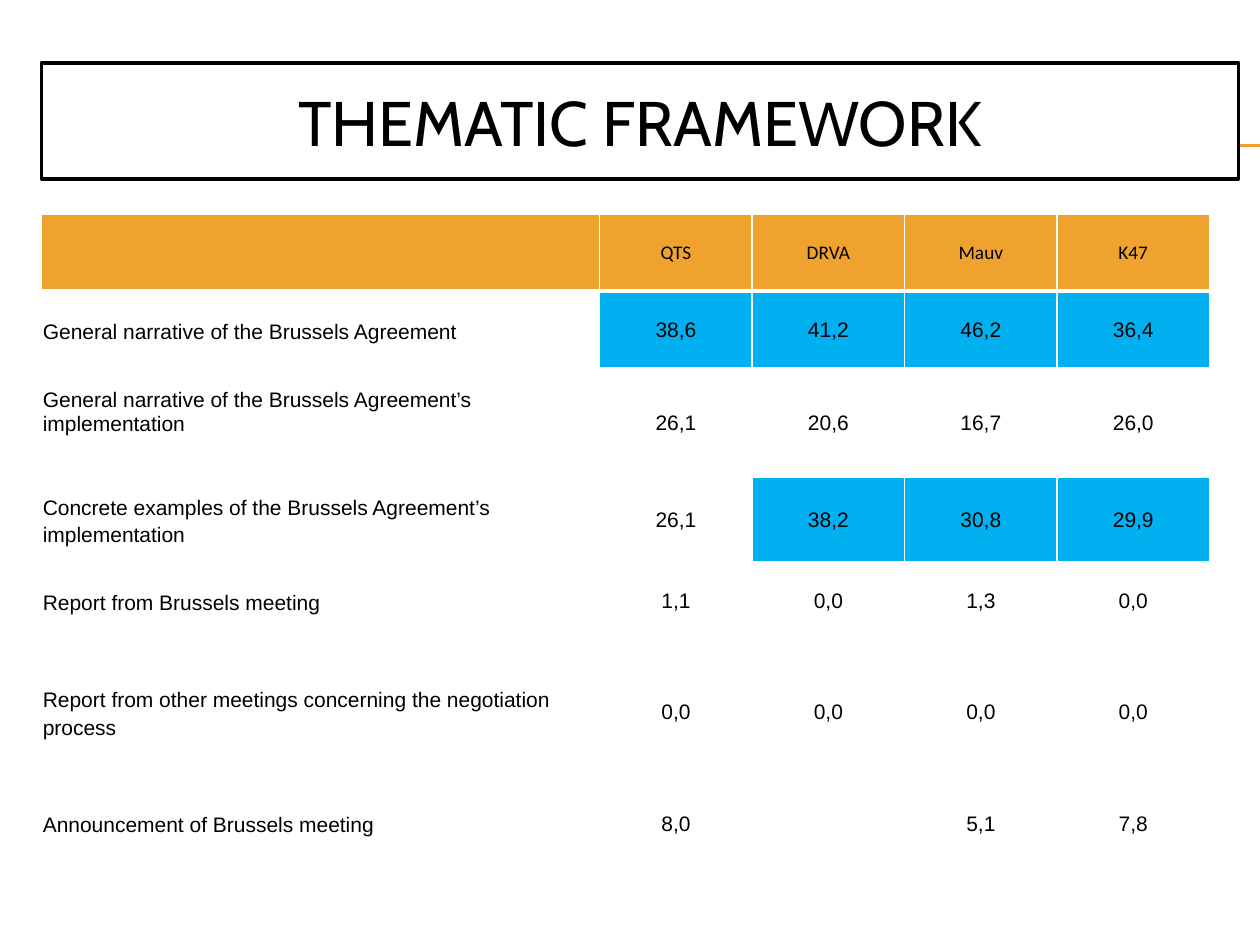
import pptx
import pptx.util
import pptx.dml.color
import pptx.enum.shapes
import pptx.enum.text
import pptx.oxml.ns
from lxml import etree

Inches, Pt = pptx.util.Inches, pptx.util.Pt
ALIGN = pptx.enum.text.PP_ALIGN
MIDDLE = pptx.enum.text.MSO_ANCHOR.MIDDLE
qn = pptx.oxml.ns.qn

COLORS = {"ink": "000000", "paper": "FFFFFF", "gold": "F0A22E", "blue": "00B0F0"}

HEADS = ["", "QTS", "DRVA", "Mauv", "K47"]
ROWS = [
    ("General narrative of the Brussels Agreement", "38,6", "41,2", "46,2", "36,4"),
    ("General narrative of the Brussels Agreement’s implementation",
     "26,1", "20,6", "16,7", "26,0"),
    ("Concrete examples of the Brussels Agreement’s implementation",
     "26,1", "38,2", "30,8", "29,9"),
    ("Report from Brussels meeting", "1,1", "0,0", "1,3", "0,0"),
    ("Report from other meetings concerning the negotiation process",
     "0,0", "0,0", "0,0", "0,0"),
    ("Announcement of Brussels meeting", "8,0", "", "5,1", "7,8"),
]
HEIGHTS = [0.61, 0.61, 0.87, 0.67, 0.61, 1.16, 0.61]
WIDTHS = [4.43] + [1.21] * 4
MARKED = {1: (1, 2, 3, 4), 3: (2, 3, 4)}  # blue columns by row
TIGHT = 2  # row with single line spacing, set above the middle


def color(name):
    return pptx.dml.color.RGBColor.from_string(COLORS[name])


def write(frame, text, font, size, align):
    para = frame.paragraphs[0]
    para.alignment = align
    run = para.add_run()
    run.text = text
    run.font.name = font
    run.font.size = Pt(size)
    run.font.color.rgb = color("ink")
    return para


def add_rules(slide, left, top, width):
    """Two thin gold lines that run behind the title."""
    for y in (top, top + 0.01):
        rule = slide.shapes.add_connector(
            pptx.enum.shapes.MSO_CONNECTOR.STRAIGHT,
            Inches(left), Inches(y), Inches(left + width), Inches(y))
        rule.line.color.rgb = color("gold")
        rule.line.width = Pt(0.75)
        etree.SubElement(rule._element.spPr, qn("a:effectLst"))
        slide.shapes._spTree.insert(2, rule._element)


def add_title(slide, left, top, width, height):
    title = slide.shapes.title
    title.left, title.top = Inches(left), Inches(top)
    title.width, title.height = Inches(width), Inches(height)
    title.fill.solid()
    title.fill.fore_color.rgb = color("paper")
    title.line.color.rgb = color("ink")
    title.line.width = Pt(2)
    title.text_frame.vertical_anchor = MIDDLE
    write(title.text_frame, "THEMATIC FRAMEWORK", "Cabin", 36, ALIGN.CENTER)


def set_edges(cell, base):
    """White borders, with the given width in points at the bottom."""
    props = cell._tc.get_or_add_tcPr()
    sides = {"L": 1, "R": 1, "T": 1, "B": base}
    for spot, (side, width) in enumerate(sides.items()):
        edge = etree.Element(qn("a:ln" + side), w=str(Pt(width)))
        fill = etree.SubElement(edge, qn("a:solidFill"))
        etree.SubElement(fill, qn("a:srgbClr"), val=COLORS["paper"])
        props.insert(spot, edge)


def fill_cell(cell, row, col, text):
    cell.vertical_anchor = MIDDLE
    cell.margin_left = cell.margin_top = cell.margin_right = Inches(0.01)
    cell.margin_bottom = 0
    shade = "gold" if row == 0 else "blue" if col in MARKED.get(row, ()) else None
    if shade:
        cell.fill.solid()
        cell.fill.fore_color.rgb = color(shade)
    else:
        cell.fill.background()
    set_edges(cell, 3 if row == 0 else 1)
    if not text:
        return
    font, size = ("Calibri", 11) if row == 0 else ("Arial", 12)
    para = write(cell.text_frame, text, font, size,
                 ALIGN.CENTER if col else ALIGN.LEFT)
    if col == 0 and row == TIGHT:
        cell.margin_bottom = Inches(0.18)
    elif col == 0:
        para.line_spacing = 1.15


def add_grid(slide, left, top):
    data = [HEADS] + ROWS
    frame = slide.shapes.add_table(
        len(data), len(HEADS), Inches(left), Inches(top),
        Inches(sum(WIDTHS)), Inches(sum(HEIGHTS)))
    table = frame.table
    table.horz_banding = False
    for col, width in zip(table.columns, WIDTHS):
        col.width = Inches(width)
    for row, height in zip(table.rows, HEIGHTS):
        row.height = Inches(height)
    for r, texts in enumerate(data):
        for c, text in enumerate(texts):
            fill_cell(table.cell(r, c), r, c, text)


def main():
    deck = pptx.Presentation()
    deck.slide_width, deck.slide_height = Inches(10), Inches(7.5)
    slide = deck.slides.add_slide(deck.slide_layouts[5])
    add_rules(slide, 0.56, 1.15, 9.44)
    add_title(slide, 0.33, 0.5, 9.5, 0.92)
    add_grid(slide, 0.33, 1.7)
    deck.save("out.pptx")


if __name__ == "__main__":
    main()
